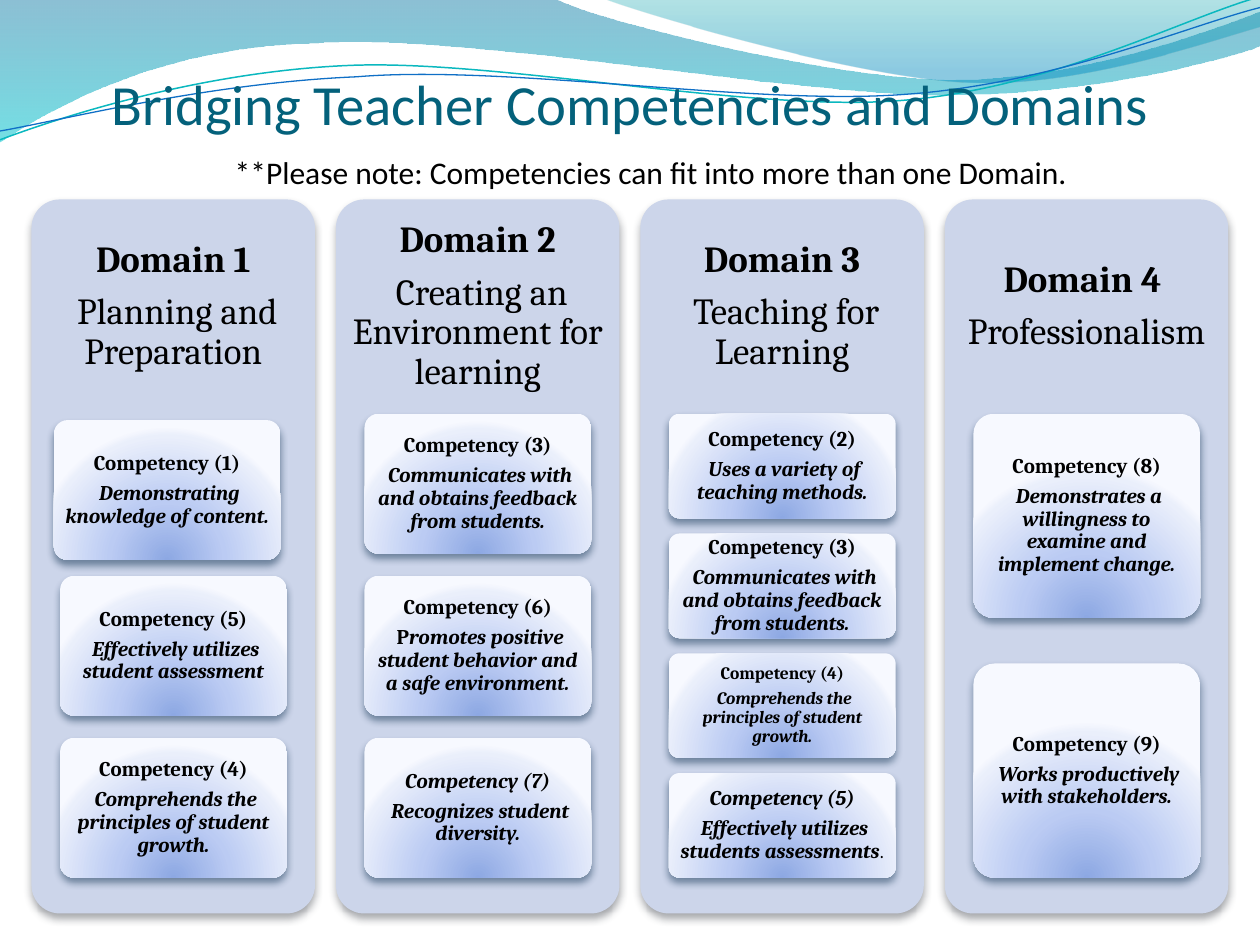
from dataclasses import dataclass

from pptx import Presentation
from pptx.dml.color import RGBColor as RGB
from pptx.enum.shapes import MSO_SHAPE as SHAPE
from pptx.enum.text import MSO_ANCHOR as ANCHOR, MSO_AUTO_SIZE as AUTO_SIZE, PP_ALIGN as ALIGN
from pptx.oxml import parse_xml
from pptx.oxml.ns import nsdecls, qn
from pptx.util import Emu, Inches, Pt

UNIT = Inches(0.1)
COLORS = {
    "text": "000000", "title": "04617B", "panel": "CCD5EA",
    "panel_shadow": "474B53", "card_shadow": "042747",
    "teal_line": "0AB8BF", "blue_line": "0F6FC6",
}
DOWNWARD = '<a:lin ang="5400000" scaled="0"/>'
FROM_BOTTOM = '<a:path path="circle"><a:fillToRect l="50000" t="130000" r="50000" b="-30000"/></a:path>'
CARD_STOPS = [(0, "8DA8E3", 100), (43, "BBCBF3", 100), (93, "EAEFFB", 100), (100, "F7F9FF", 100)]

LEFT_WAVE = [
    (0, 0), (44, -0.1), (47.6, 1.7, 66.4, 6.3, 75.8, 6.3), (85.3, 6.3, 95.8, 2.6, 100, 0.9),
    (100.1, 3.6), (98.3, 4.4, 87, 7.6, 74.6, 7.5), (62.2, 7.5, 38.2, 2.8, 25.7, 3.4),
    (12.9, 3.6, 4.6, 8.3, -0.1, 11.3),
]
RIGHT_WAVE = [
    (47.9, -0.1), (50.9, 1.1, 68.2, 6.2, 76.9, 6.5), (85.6, 6.9, 96.1, 3.2, 100, 2.1), (100, 0),
]
TEAL_CURVE = [
    (0, 11.1), (4.8, 9.3, 15.8, 5.7, 27.7, 5.2), (39.5, 4.7, 59.3, 8.9, 71.3, 8),
    (83.3, 7.1, 93.8, 1.5, 99.8, -0.2),
]
BLUE_CURVE = [
    (0, 10.4), (4.7, 9.6, 16.4, 6.6, 28.3, 6.1), (40.3, 5.1, 59.7, 8.4, 71.7, 7.5),
    (83.6, 6.7, 94.1, 2.1, 100, 0.6),
]


@dataclass
class Card:
    """Hold one competency and its exceptions of style."""
    number: int
    body: str
    head_style: str = "b"
    lead: str = " "
    tail: str = ""
    size: float = 12
    nudge: float = 0


FEEDBACK = "Communicates with and obtains feedback from students."
GROWTH = "Comprehends the principles of student growth."
DOMAINS = [
    ("Domain 1", " Planning and Preparation", [11.1] * 3, [
        Card(1, "Demonstrating knowledge of content.", nudge=0.5),
        Card(5, "Effectively utilizes student assessment"),
        Card(4, GROWTH)]),
    ("Domain 2", " Creating an Environment for learning", [11.1] * 3, [
        Card(3, FEEDBACK),
        Card(6, "romotes positive student behavior and a safe environment.", lead=" P"),
        Card(7, "Recognizes student diversity.", head_style="bi")]),
    ("Domain 3", " Teaching for Learning", [8.3] * 4, [
        Card(2, "Uses a variety of teaching methods."),
        Card(3, FEEDBACK),
        Card(4, GROWTH, size=10),
        Card(5, "Effectively utilizes students assessments", head_style="bi", tail=".")]),
    ("Domain 4 ", "Professionalism", [16.2, 17], [
        Card(8, "Demonstrates a willingness to examine and implement change."),
        Card(9, "Works productively with stakeholders.")]),
]


def write(shape, paragraphs, size=12, font="Cambria", color="text", anchor=ANCHOR.MIDDLE,
          insets=(0.03, 0.03, 0.03, 0.03), line_spacing=0.9, space_after=0.35):
    """Fill a shape with centred paragraphs of (text, style, size change) runs."""
    frame = shape.text_frame
    frame.word_wrap, frame.auto_size, frame.vertical_anchor = True, AUTO_SIZE.NONE, anchor
    (frame.margin_left, frame.margin_top,
     frame.margin_right, frame.margin_bottom) = map(Inches, insets)
    for index, runs in enumerate(paragraphs):
        paragraph = frame.add_paragraph() if index else frame.paragraphs[0]
        paragraph.alignment = ALIGN.CENTER
        paragraph.line_spacing = line_spacing
        paragraph.space_before, paragraph.space_after = Pt(0), Pt(size * space_after)
        for text, style, change in runs:
            run = paragraph.add_run()
            run.text = text
            run.font.name, run.font.size = font, Pt(size + change)
            run.font.bold, run.font.italic = "b" in style, "i" in style
            run.font.color.rgb = RGB.from_string(COLORS[color])


class Builder:
    """Draw styled elements on the slide in a grid of 100 columns by 75 rows."""

    def __init__(self, presentation):
        """Add a title-only slide."""
        self.slide = presentation.slides.add_slide(presentation.slide_layouts[5])
        self.shapes = self.slide.shapes

    def box(self, *cells):
        """Convert grid cells to slide lengths."""
        return [Emu(round(cell * UNIT)) for cell in cells]

    def gradient(self, shape, stops, direction):
        """Give a shape a gradient with stops of (position, colour, opacity)."""
        shape.fill.gradient()
        marks = "".join(
            f'<a:gs pos="{position * 1000}"><a:srgbClr val="{color}">'
            f'<a:alpha val="{opacity * 1000}"/></a:srgbClr></a:gs>'
            for position, color, opacity in stops)
        properties = shape._element.spPr
        properties.replace(properties.find(qn("a:gradFill")), parse_xml(
            f'<a:gradFill {nsdecls("a")} rotWithShape="1"><a:gsLst>{marks}</a:gsLst>'
            f'{direction}</a:gradFill>'))

    def freeform(self, outline, close):
        """Draw an outline of lines and Bezier curves without a shadow."""
        points = [tuple(self.box(*segment[i:i + 2]))
                  for segment in outline for i in range(0, len(segment), 2)]
        builder = self.shapes.build_freeform(*points[0], scale=1)
        builder.add_line_segments(points[1:], close=close)
        shape = builder.convert_to_shape()
        shape.shadow.inherit = False
        steps = iter(list(shape._element.iter(qn("a:lnTo"))))
        for segment in outline[1:]:
            step = next(steps)
            if len(segment) == 6:
                curve = parse_xml(f'<a:cubicBezTo {nsdecls("a")}/>')
                step.addprevious(curve)
                for corner in (step, next(steps), next(steps)):
                    curve.append(corner[0])
                    corner.getparent().remove(corner)
        return shape

    def wave(self, outline, stops):
        """Draw a translucent filled wave."""
        shape = self.freeform(outline, True)
        self.gradient(shape, stops, DOWNWARD)
        shape.line.fill.background()

    def curve(self, outline, color, width):
        """Draw a thin open curve."""
        shape = self.freeform(outline, False)
        shape.fill.background()
        shape.line.color.rgb = RGB.from_string(COLORS[color])
        shape.line.width = Pt(width)

    def rounded(self, cells, shadow):
        """Draw a rounded rectangle with a soft shadow below it."""
        shape = self.shapes.add_shape(SHAPE.ROUNDED_RECTANGLE, *self.box(*cells))
        shape.adjustments[0] = 0.1
        shape.fill.solid()
        shape.fill.fore_color.rgb = RGB.from_string(COLORS["panel"])
        shape.line.fill.background()
        shape.shadow.inherit = False
        shape._element.spPr.find(qn("a:effectLst")).append(parse_xml(
            f'<a:outerShdw {nsdecls("a")} blurRad="{Pt(4.5)}" dist="{Pt(3)}" dir="5400000" '
            f'rotWithShape="0"><a:srgbClr val="{COLORS[shadow]}"><a:alpha val="48000"/>'
            '</a:srgbClr></a:outerShdw>'))
        return shape

    def card(self, card, left, top, height):
        """Draw a competency card."""
        shape = self.rounded((left - card.nudge, top + card.nudge, 18, height), "card_shadow")
        self.gradient(shape, CARD_STOPS, FROM_BOTTOM)
        body = [(card.lead, "b", 0), (card.body, "bi", 0), (card.tail, "", -1)]
        write(shape, [[(f"Competency ({card.number})", card.head_style, 0)],
                      [run for run in body if run[0]]], size=card.size)

    def text(self, cells, paragraphs, **style):
        """Add a text box."""
        write(self.shapes.add_textbox(*self.box(*cells)), paragraphs, **style)

    def domain(self, column, heading, name, heights, cards):
        """Draw a domain panel with its heading and evenly spaced cards."""
        left = 2.5 + 24.16 * column
        self.rounded((left, 15.83, 22.5, 56.67), "panel_shadow")
        self.text((left, 15.83, 22.5, 17), [[(heading, "b", 0)], [(name, "", 0)]],
                  size=21, insets=(0.09,) * 4)
        gap = (36.82 - sum(heights)) / (len(heights) - 1)
        top = 32.84
        for card, height in zip(cards, heights):
            self.card(card, left + 2.27, top, height)
            top += height + gap

    def title(self, cells, text):
        """Place the title in front of the waves."""
        title = self.shapes.title
        title.left, title.top, title.width, title.height = self.box(*cells)
        write(title, [[(text, "", 0)]], size=32.4, font="Calibri", color="title",
              anchor=ANCHOR.BOTTOM, insets=(0, 0.05, 0, 0), line_spacing=1, space_after=0)
        self.shapes._spTree.append(title._element)


def main():
    """Build and save the slide."""
    presentation = Presentation()
    presentation.slide_width, presentation.slide_height = 100 * UNIT, 75 * UNIT
    builder = Builder(presentation)
    builder.wave(LEFT_WAVE, [(0, "0074A1", 45), (100, "00C6CF", 55)])
    builder.wave(RIGHT_WAVE, [(0, "00A1A9", 30), (80, "008BBF", 45)])
    builder.curve(TEAL_CURVE, "teal_line", 0.85)
    builder.curve(BLUE_CURVE, "blue_line", 0.75)
    for column, domain in enumerate(DOMAINS):
        builder.domain(column, *domain)
    builder.title((5, 2.5, 90, 8.33), "Bridging Teacher Competencies and Domains")
    builder.text((9.17, 11.66, 85, 7.1),
                 [[("**Please note: Competencies can fit into more than one Domain.", "", 0)]],
                 size=18, font="Calibri", anchor=ANCHOR.TOP, insets=(0.1, 0.05, 0.1, 0.05),
                 line_spacing=1, space_after=0)
    presentation.save("out.pptx")


if __name__ == "__main__":
    main()
